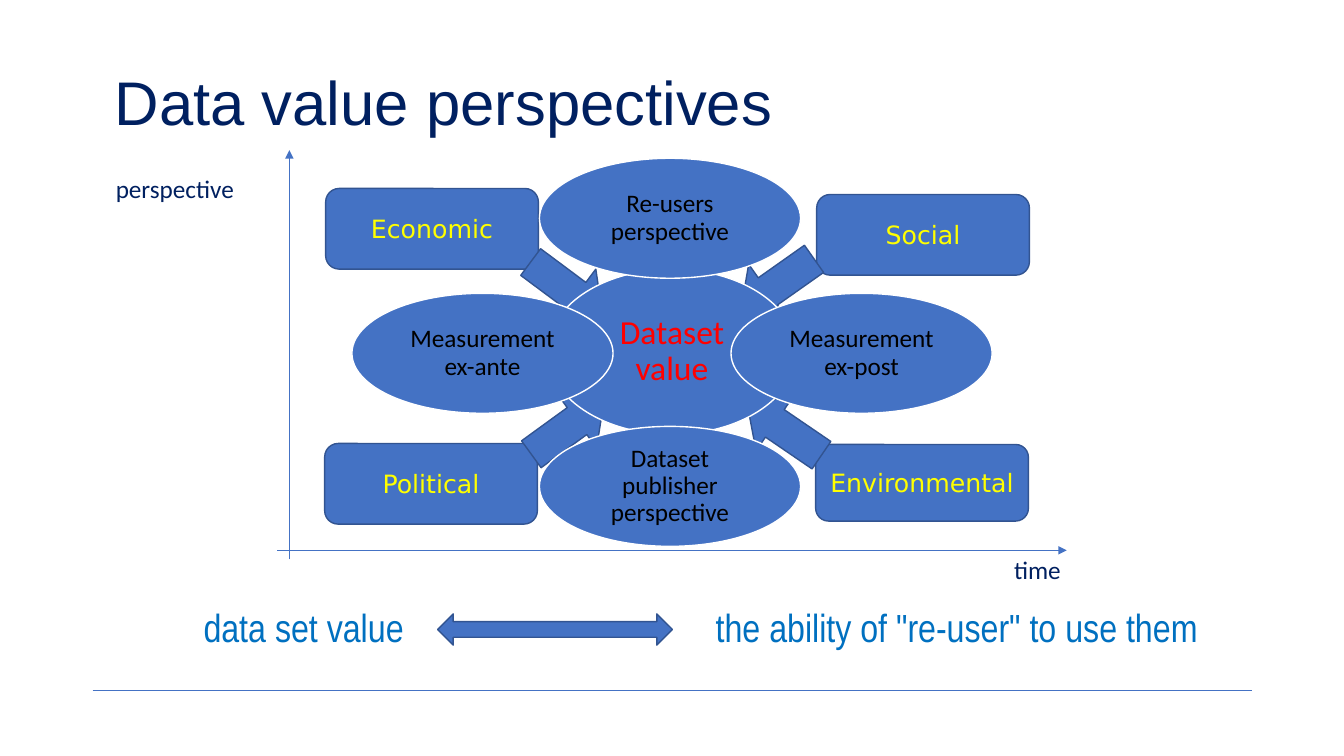
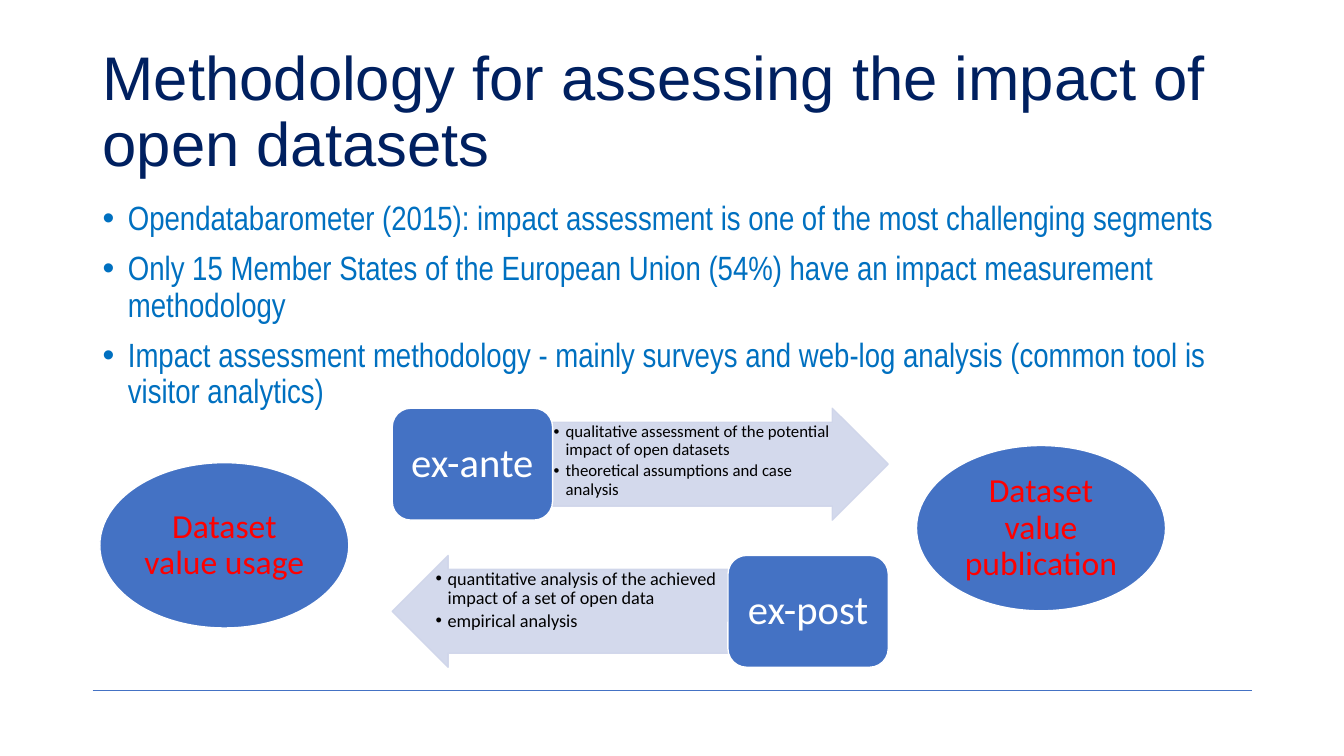
from dataclasses import dataclass
from typing import NamedTuple

from lxml.etree import SubElement
from pptx import Presentation
from pptx.dml.color import RGBColor
from pptx.enum.shapes import MSO_CONNECTOR as Connector, MSO_SHAPE as Preset
from pptx.enum.text import MSO_ANCHOR as Anchor, PP_ALIGN as Align
from pptx.oxml.ns import qn
from pptx.util import Emu, Pt

EMU_PER_PX = 9144
BLUE, EDGE, PALE = "4472C4", "325491", "CFD5EA"
NAVY, SKY, YELLOW = "002060", "0070C0", "FFFF00"
RED, BLACK, WHITE = "FF0000", "000000", "FFFFFF"


class Area(NamedTuple):
    left: int
    top: int
    width: int
    height: int


@dataclass(frozen=True)
class TextStyle:
    size: int
    font: str
    color: str
    align: Align = Align.LEFT
    anchor: Anchor = Anchor.TOP
    margins: tuple[int, int] = (10, 5)
    line_spacing: float = 0.9
    gap: int = 0
    bullet_indent: int = 0


@dataclass(frozen=True)
class Figure:
    preset: Preset
    area: Area
    text: str = ""
    style: TextStyle | None = None
    fill: str = BLUE
    line: str = EDGE
    rotation: float = 0
    opacity: int = 100
    adjustments: tuple[float, ...] = ()


def centred(size: int, color: str, margins: tuple[int, int]) -> TextStyle:
    return TextStyle(size, "Calibri", color, Align.CENTER, Anchor.MIDDLE, margins)


def small_bullets(size: int) -> TextStyle:
    return TextStyle(size, "Calibri", BLACK, margins=(1, 1), gap=2, bullet_indent=12)


TITLE = TextStyle(44, "Arial", NAVY, anchor=Anchor.MIDDLE)
AXIS_LABEL = TextStyle(18, "Calibri", NAVY, line_spacing=1.0)
IMPACT = TextStyle(18, "DejaVu Sans", YELLOW, Align.CENTER, Anchor.MIDDLE, line_spacing=1.0)
STATEMENT = TextStyle(28, "Arial Narrow", SKY)
BODY = TextStyle(24, "Arial Narrow", SKY, gap=10, bullet_indent=25)
PERSPECTIVE = centred(18, BLACK, (3, 3))
DATASET_VALUE = centred(24, RED, (3, 3))
PHASE = centred(29, WHITE, (12, 6))


def px(length: int) -> Emu:
    return Emu(length * EMU_PER_PX)


def rgb(color: str) -> RGBColor:
    return RGBColor.from_string(color)


def write_text(shape, text: str, style: TextStyle) -> None:
    frame = shape.text_frame
    frame.word_wrap = True
    frame.vertical_anchor = style.anchor
    horizontal, vertical = style.margins
    frame.margin_left = frame.margin_right = px(horizontal)
    frame.margin_top = frame.margin_bottom = px(vertical)
    frame.text = text
    for index, paragraph in enumerate(frame.paragraphs):
        if style.bullet_indent:
            properties = paragraph._p.get_or_add_pPr()
            properties.set("marL", str(px(style.bullet_indent)))
            properties.set("indent", str(-px(style.bullet_indent)))
            SubElement(properties, qn("a:buFont")).set("typeface", "Arial")
            SubElement(properties, qn("a:buChar")).set("char", "•")
        paragraph.alignment = style.align
        paragraph.line_spacing = style.line_spacing
        if index:
            paragraph.space_before = Pt(style.gap)
        for run in paragraph.runs:
            run.font.size = Pt(style.size)
            run.font.name = style.font
            run.font.color.rgb = rgb(style.color)


def add_text(slide, area: Area, text: str, style: TextStyle) -> None:
    write_text(slide.shapes.add_textbox(*map(px, area)), text, style)


def add_figure(slide, figure: Figure) -> None:
    shape = slide.shapes.add_shape(figure.preset, *map(px, figure.area))
    shape.shadow.inherit = False
    shape.rotation = figure.rotation
    for index, value in enumerate(figure.adjustments):
        shape.adjustments[index] = value
    shape.fill.solid()
    shape.fill.fore_color.rgb = rgb(figure.fill)
    shape.line.color.rgb = rgb(figure.line)
    shape.line.width = Pt(1)
    if figure.opacity < 100:
        for color in shape._element.iter(qn("a:srgbClr")):
            SubElement(color, qn("a:alpha")).set("val", str(figure.opacity * 1000))
    if figure.style:
        write_text(shape, figure.text, figure.style)


def add_line(slide, start: tuple[int, int], end: tuple[int, int], arrow: bool = False) -> None:
    connector = slide.shapes.add_connector(Connector.STRAIGHT, *map(px, start + end))
    connector.line.color.rgb = rgb(BLUE)
    connector.line.width = Pt(0.5)
    if arrow:
        SubElement(connector.line._get_or_add_ln(), qn("a:tailEnd")).set("type", "triangle")
    SubElement(connector._element.spPr, qn("a:effectLst"))


def add_slide(presentation, title: str, left: int, top: int):
    slide = presentation.slides.add_slide(presentation.slide_layouts[6])
    add_line(slide, (92, 685), (1242, 685))
    add_text(slide, Area(left, top, 1150, 145), title, TITLE)
    return slide


def impact_box(text: str, left: int, top: int, height: int = 80) -> Figure:
    return Figure(Preset.ROUNDED_RECTANGLE, Area(left, top, 211, height), text, IMPACT)


def impact_arrow(left: int, top: int, rotation: float) -> Figure:
    return Figure(Preset.DOWN_ARROW, Area(left, top, 66, 89), rotation=rotation)


def perspective_oval(text: str, left: int, top: int) -> Figure:
    return Figure(Preset.OVAL, Area(left, top, 259, 119), text, PERSPECTIVE, line=WHITE)


def value_oval(text: str, left: int, top: int) -> Figure:
    return Figure(Preset.OVAL, Area(left, top, 247, 164), text, DATASET_VALUE, line=WHITE)


def phase_box(text: str, left: int, top: int) -> Figure:
    return Figure(Preset.ROUNDED_RECTANGLE, Area(left, top, 159, 111), text, PHASE, line=WHITE)


def phase_arrow(preset: Preset, left: int, top: int) -> Figure:
    return Figure(preset, Area(left, top, 333, 111), fill=PALE, line=PALE,
                  opacity=90, adjustments=(0.75, 0.5))


def build_perspectives(presentation) -> None:
    slide = add_slide(presentation, "Data value perspectives", 104, 32)
    add_line(slide, (275, 546), (1058, 546), arrow=True)
    add_line(slide, (287, 555), (287, 149), arrow=True)
    add_text(slide, Area(996, 545, 150, 40), "time", AXIS_LABEL)
    add_text(slide, Area(105, 167, 150, 40), "perspective", AXIS_LABEL)
    figures = (
        impact_box("Economic", 323, 187),
        impact_box("Social", 810, 193),
        impact_box("Political", 322, 440),
        impact_box("Environmental", 809, 441, 76),
        impact_arrow(738, 238, 54.8),
        impact_arrow(745, 382, 124.3),
        impact_arrow(529, 242, 306.7),
        impact_arrow(530, 380, 234),
        value_oval("Dataset value", 543, 267),
        perspective_oval("Re-users perspective", 535, 157),
        perspective_oval("Measurement ex-post", 725, 291),
        perspective_oval("Dataset publisher perspective", 535, 423),
        perspective_oval("Measurement ex-ante", 349, 291),
        Figure(Preset.LEFT_RIGHT_ARROW, Area(434, 609, 233, 31)),
    )
    for figure in figures:
        add_figure(slide, figure)
    add_text(slide, Area(192, 599, 235, 64), "data set value", STATEMENT)
    add_text(slide, Area(700, 599, 554, 64), 'the ability of "re-user" to use them', STATEMENT)


def build_methodology(presentation) -> None:
    slide = add_slide(
        presentation, "Methodology for assessing the impact of open datasets", 92, 40)
    add_text(slide, Area(92, 195, 1150, 480), "\n".join((
        "Opendatabarometer (2015): impact assessment is one of the most challenging segments",
        "Only 15 Member States of the European Union (54%) have an impact measurement methodology",
        "Impact assessment methodology - mainly surveys and web-log analysis "
        "(common tool is visitor analytics)",
    )), BODY)
    figures = (
        phase_arrow(Preset.RIGHT_ARROW, 548, 405),
        phase_box("ex-ante", 389, 405),
        phase_arrow(Preset.LEFT_ARROW, 389, 551),
        phase_box("ex-post", 722, 551),
        value_oval("Dataset value publication", 909, 442),
        value_oval("Dataset value usage", 99, 459),
    )
    for figure in figures:
        add_figure(slide, figure)
    add_text(slide, Area(548, 419, 291, 83), "\n".join((
        "qualitative assessment of the potential impact of open datasets",
        "theoretical assumptions and case analysis",
    )), small_bullets(12))
    add_text(slide, Area(431, 564, 291, 83), "\n".join((
        "quantitative analysis of the achieved impact of a set of open data",
        "empirical analysis",
    )), small_bullets(13))


def main() -> None:
    presentation = Presentation()
    presentation.slide_width = px(1333)
    presentation.slide_height = px(750)
    build_perspectives(presentation)
    build_methodology(presentation)
    presentation.save("out.pptx")


if __name__ == "__main__":
    main()
